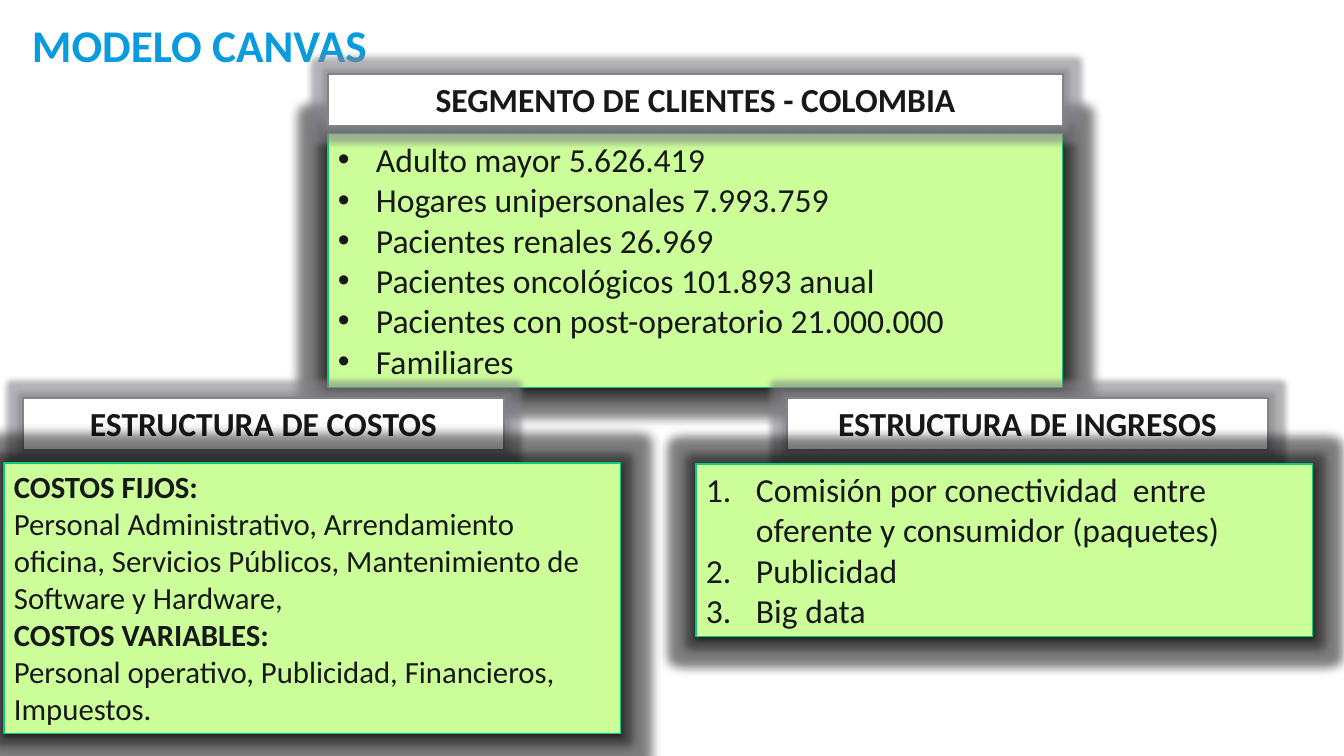
from lxml import etree
from pptx import Presentation
from pptx import util as u
from pptx.dml.color import RGBColor
from pptx.enum import shapes, text
from pptx.oxml.ns import qn

PX = 914400 / 100.8
BLUE = RGBColor(0x09, 0x9B, 0xDD)
INK = RGBColor(0x18, 0x18, 0x18)
WHITE = RGBColor(0xFF, 0xFF, 0xFF)
BLACK = RGBColor(0x00, 0x00, 0x00)
GREY = RGBColor(0x82, 0x82, 0x88)
LIME = RGBColor(0xCC, 0xFF, 0x99)
GREEN = RGBColor(0x08, 0xCC, 0x78)

BULLET = ("a:buChar", {"char": "•"})
NUMBER = ("a:buAutoNum", {"type": "arabicPeriod"})


def px(length):
    return u.Emu(round(length * PX))


class CanvasSlide:
    """Holds the slide and the look shared by its headings and panels."""

    font = "Calibri"

    def __init__(self, deck):
        self.slide = deck.slides.add_slide(deck.slide_layouts[6])

    def style(self, paragraph, size, color, bold):
        paragraph.font.name = self.font
        paragraph.font.size = u.Pt(size)
        paragraph.font.color.rgb = color
        paragraph.font.bold = bold

    def title(self, wording, left, top, width, height):
        frame = self.slide.shapes.add_textbox(*map(px, (left, top, width, height))).text_frame
        frame.word_wrap = True
        frame.margin_left = 0
        frame.vertical_anchor = text.MSO_ANCHOR.MIDDLE
        heading = frame.paragraphs[0]
        heading.text = wording
        heading.line_spacing = 0.85
        self.style(heading, 32.4, BLUE, True)

    def effect(self, box, tag, color, opacity, **settings):
        effects = box._element.spPr.find(qn("a:effectLst"))
        item = etree.SubElement(effects, qn(tag), settings)
        tint = etree.SubElement(item, qn("a:srgbClr"), val=str(color))
        etree.SubElement(tint, qn("a:alpha"), val=str(opacity * 1000))

    def box(self, place, fill, line, weight):
        box = self.slide.shapes.add_shape(shapes.MSO_SHAPE.RECTANGLE, *map(px, place))
        box.shadow.inherit = False
        box.fill.solid()
        box.fill.fore_color.rgb = fill
        box.line.color.rgb = line
        box.line.width = u.Pt(weight)
        frame = box.text_frame
        frame.word_wrap = True
        frame.auto_size = text.MSO_AUTO_SIZE.SHAPE_TO_FIT_TEXT
        frame.vertical_anchor = text.MSO_ANCHOR.TOP
        return box

    def fill_text(self, frame, entries, size, align, marker=None, indent=0):
        """Fill the frame with (wording, bold) entries, one a paragraph."""
        for index, (wording, bold) in enumerate(entries):
            paragraph = frame.add_paragraph() if index else frame.paragraphs[0]
            paragraph.text = wording
            paragraph.alignment = align
            self.style(paragraph, size, INK, bold)
            if marker:
                tag, settings = marker
                properties = paragraph._p.get_or_add_pPr()
                properties.set("marL", str(px(indent)))
                properties.set("indent", str(-px(indent)))
                face = etree.Element(qn("a:buFont"), typeface="Arial" if marker is BULLET else self.font)
                sign = etree.Element(qn(tag), settings)
                properties.insert(0, face)
                properties.insert(1, sign)

    def heading(self, wording, left, top, width):
        box = self.box((left, top, width, 52), WHITE, GREY, 1)
        self.effect(box, "a:glow", GREY, 60, rad=str(u.Pt(8)))
        self.fill_text(box.text_frame, [(wording, True)], 24, text.PP_ALIGN.CENTER)

    def panel(self, entries, place, size=24, marker=None, indent=0):
        box = self.box(place, LIME, GREEN, 0.75)
        self.effect(box, "a:glow", BLACK, 35, rad=str(u.Pt(14)))
        self.effect(box, "a:outerShdw", BLACK, 68, blurRad=str(u.Pt(4)),
                    dist=str(u.Pt(1.2)), dir="5400000", rotWithShape="0")
        self.fill_text(box.text_frame, entries, size, text.PP_ALIGN.LEFT, marker, indent)


def main():
    deck = Presentation()
    deck.slide_width, deck.slide_height = px(1344), px(756)
    canvas = CanvasSlide(deck)

    canvas.title("MODELO CANVAS", 32, 22, 1312, 54)

    segments = ["Adulto mayor 5.626.419", "Hogares unipersonales 7.993.759",
                "Pacientes renales 26.969", "Pacientes oncológicos 101.893 anual",
                "Pacientes con post-operatorio 21.000.000", "Familiares"]
    canvas.panel([(segment, False) for segment in segments],
                 (328, 134, 735, 254), marker=BULLET, indent=38)

    canvas.heading("SEGMENTO DE CLIENTES - COLOMBIA", 328, 74, 735)
    canvas.heading("ESTRUCTURA DE COSTOS", 23, 398, 481)
    canvas.heading("ESTRUCTURA DE INGRESOS", 787, 398, 481)

    costs = [
        ("COSTOS FIJOS:", True),
        ("Personal Administrativo, Arrendamiento oficina, Servicios Públicos, "
         "Mantenimiento de Software y Hardware,", False),
        ("COSTOS VARIABLES:", True),
        ("Personal operativo, Publicidad, Financieros, Impuestos.", False),
    ]
    canvas.panel(costs, (4, 463, 617, 271), size=22)

    incomes = ["Comisión por conectividad  entre oferente y consumidor (paquetes)",
               "Publicidad", "Big data"]
    canvas.panel([(income, False) for income in incomes],
                 (696, 464, 617, 173), marker=NUMBER, indent=50)

    deck.save("out.pptx")


if __name__ == "__main__":
    main()
